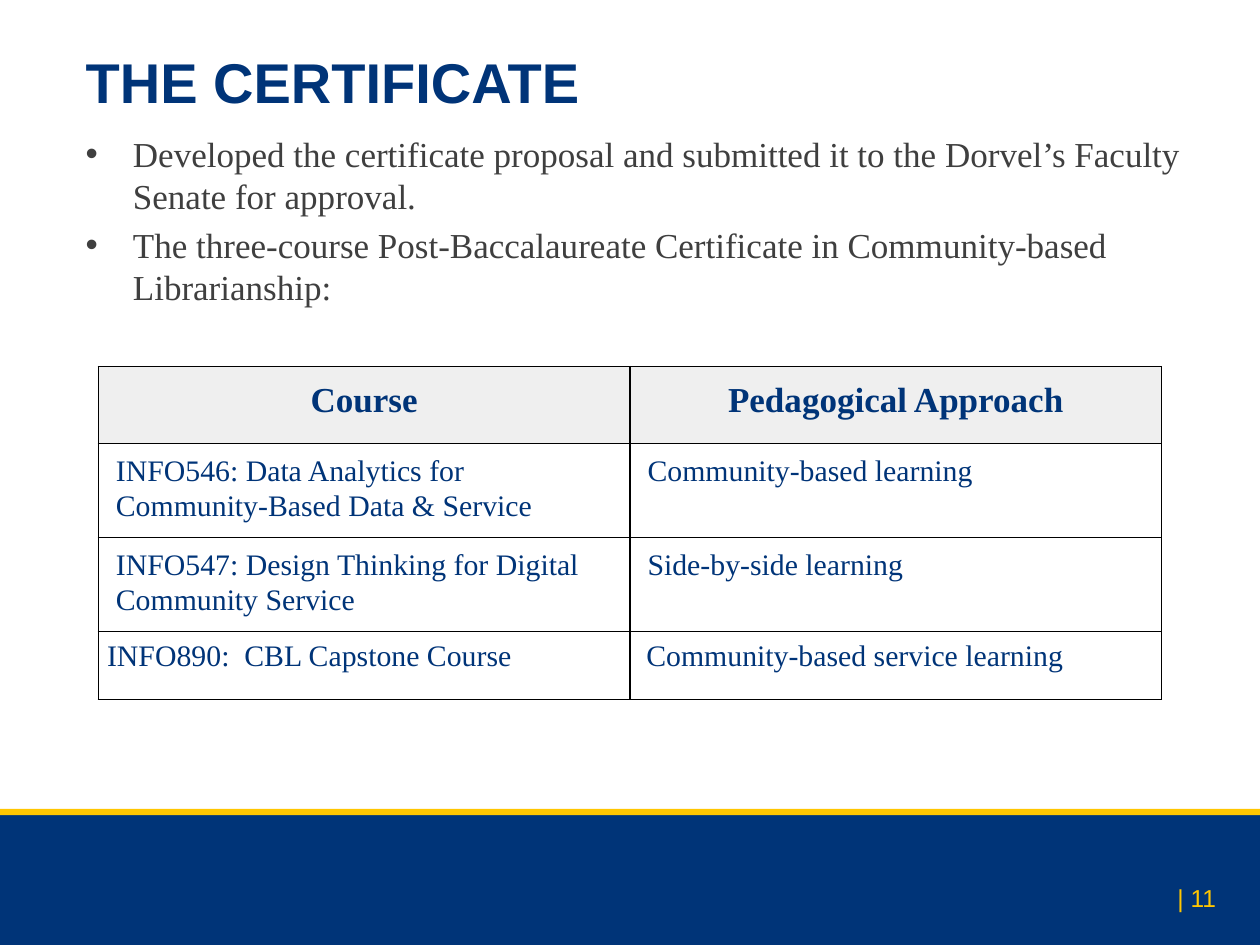
import pptx
import pptx.util
import pptx.dml.color
import pptx.enum.shapes
import pptx.enum.text
import pptx.oxml
import pptx.oxml.ns
from pptx.util import Inches

THEME = {
    "navy": "003478", "gold": "FFC600", "gray": "3F3F3F", "header": "EFEFEF", "border": "000000",
    "sans": "Arial", "serif": "Times New Roman",
    "title": 32, "body": 20, "cell": 17, "number": 14, "rule": 1,
}
ALIGN = pptx.enum.text.PP_ALIGN
ANCHOR = pptx.enum.text.MSO_ANCHOR

TITLE = "THE CERTIFICATE"
BULLETS = [
    "Developed the certificate proposal and submitted it to the Dorvel’s Faculty Senate for approval.",
    "The three-course Post-Baccalaureate Certificate in Community-based Librarianship:",
]
PAGE_NUMBER = "| 11"
HEADERS = ["Course", "Pedagogical Approach"]
COURSES = [
    ("INFO546: Data Analytics for Community-Based Data & Service", "Community-based learning"),
    ("INFO547: Design Thinking for Digital Community Service", "Side-by-side learning"),
    ("INFO890:  CBL Capstone Course", "Community-based service learning"),
]
ROW_HEIGHTS = [0.61, 0.72, 0.72, 0.54]
CELL_INDENTS = [(0, 0), (0.07, 0.07), (0.07, 0.07), (0, 0.06)]
LINE_SPACINGS = [1.15, 1.07, 1.07, 1]
COLUMN_WIDTH = 4.22
CELL_MARGIN = 0.07
BANDS = [(6.47, 1.12, "navy"), (6.42, 0.05, "gold")]


def rgb(name):
    return pptx.dml.color.RGBColor.from_string(THEME[name])


def write(tf, lines, size, font, color, bold=False, align=ALIGN.LEFT, spacing=None, indent=None):
    tf.word_wrap = True
    for i, line in enumerate(lines):
        p = tf.paragraphs[0] if i == 0 else tf.add_paragraph()
        p.alignment = align
        if spacing:
            p.line_spacing = spacing
        if indent:
            p._p.get_or_add_pPr().set("marL", str(Inches(indent)))
        r = p.add_run()
        r.text = line
        r.font.size = pptx.util.Pt(THEME[size])
        r.font.name = THEME[font]
        r.font.bold = bold
        r.font.color.rgb = rgb(color)


def place(sp, left, top, width, height):
    sp.left, sp.top, sp.width, sp.height = map(Inches, (left, top, width, height))


def add_borders(cell):
    tcPr = cell._tc.get_or_add_tcPr()
    for side in ("lnL", "lnR", "lnT", "lnB"):
        tcPr.append(pptx.oxml.parse_xml(
            f'<a:{side} {pptx.oxml.ns.nsdecls("a")} w="{pptx.util.Pt(THEME["rule"])}">'
            f'<a:solidFill><a:srgbClr val="{THEME["border"]}"/></a:solidFill></a:{side}>'))


def add_bands(slide):
    for top, height, color in BANDS:
        sp = slide.shapes.add_shape(pptx.enum.shapes.MSO_SHAPE.RECTANGLE,
                                    0, Inches(top), Inches(10), Inches(height))
        sp.shadow.inherit = False
        sp.fill.solid()
        sp.fill.fore_color.rgb = rgb(color)
        sp.line.fill.background()


def add_course_table(slide):
    rows = [HEADERS, *COURSES]
    table = slide.shapes.add_table(
        len(rows), len(HEADERS), Inches(0.78), Inches(2.91),
        Inches(COLUMN_WIDTH * len(HEADERS)), Inches(sum(ROW_HEIGHTS))).table
    table.horz_banding = False
    for column in table.columns:
        column.width = Inches(COLUMN_WIDTH)
    for i, texts in enumerate(rows):
        table.rows[i].height = Inches(ROW_HEIGHTS[i])
        is_header = i == 0
        for j, text in enumerate(texts):
            cell = table.cell(i, j)
            cell.margin_left = cell.margin_right = Inches(CELL_MARGIN)
            cell.margin_top = cell.margin_bottom = Inches(CELL_MARGIN)
            add_borders(cell)
            if is_header:
                cell.fill.solid()
                cell.fill.fore_color.rgb = rgb("header")
            else:
                cell.fill.background()
            write(cell.text_frame, [text], "body" if is_header else "cell", "serif", "navy",
                  bold=is_header, align=ALIGN.CENTER if is_header else ALIGN.LEFT,
                  spacing=LINE_SPACINGS[i], indent=CELL_INDENTS[i][j])


def main():
    prs = pptx.Presentation()
    prs.slide_width, prs.slide_height = Inches(10), Inches(7.5)
    slide = prs.slides.add_slide(prs.slide_layouts[1])
    add_bands(slide)

    title, body = slide.placeholders
    place(title, 0.58, 0.29, 9.17, 0.71)
    title.text_frame.vertical_anchor = ANCHOR.MIDDLE
    write(title.text_frame, [TITLE], "title", "sans", "navy", bold=True)
    place(body, 0.58, 1, 9.17, 5.41)
    write(body.text_frame, BULLETS, "body", "serif", "gray")

    number = slide.shapes.add_textbox(Inches(9.08), Inches(6.96), Inches(0.67), Inches(0.4))
    write(number.text_frame, [PAGE_NUMBER], "number", "sans", "gold", align=ALIGN.RIGHT)
    add_course_table(slide)
    prs.save("out.pptx")


if __name__ == "__main__":
    main()
